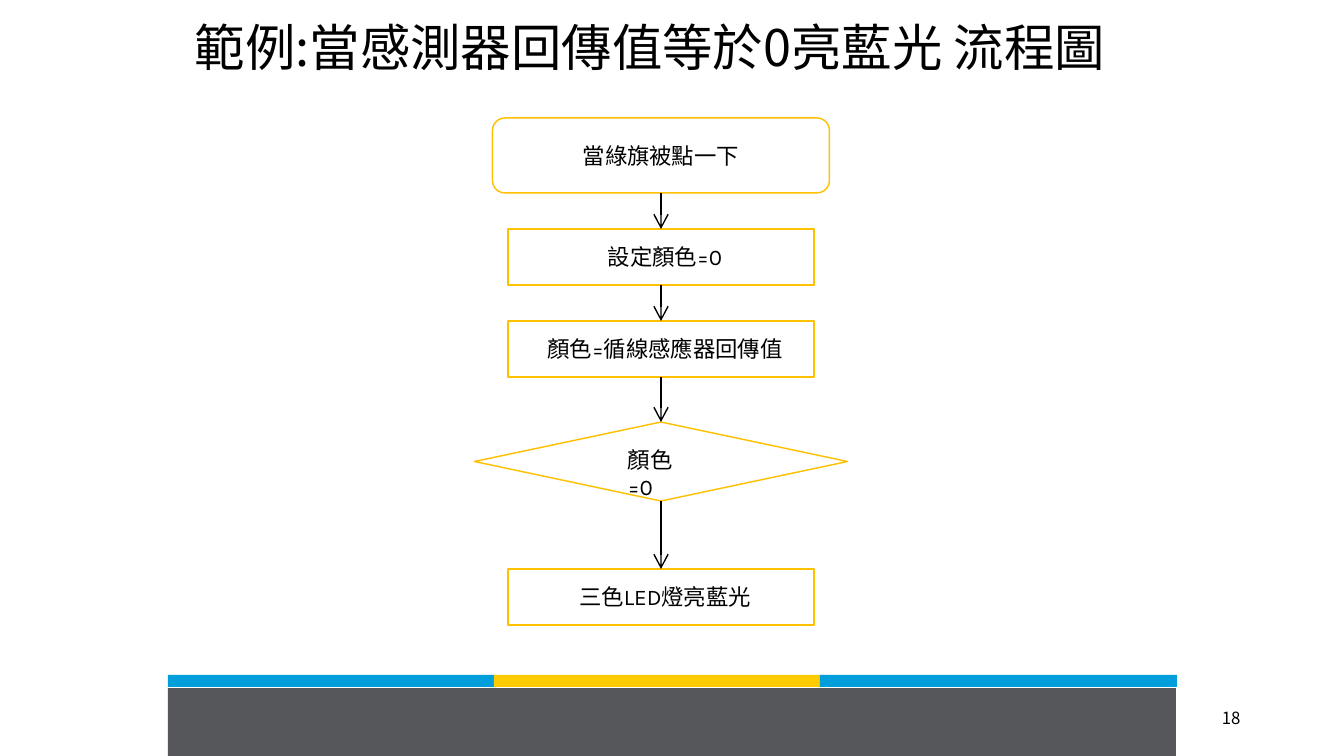
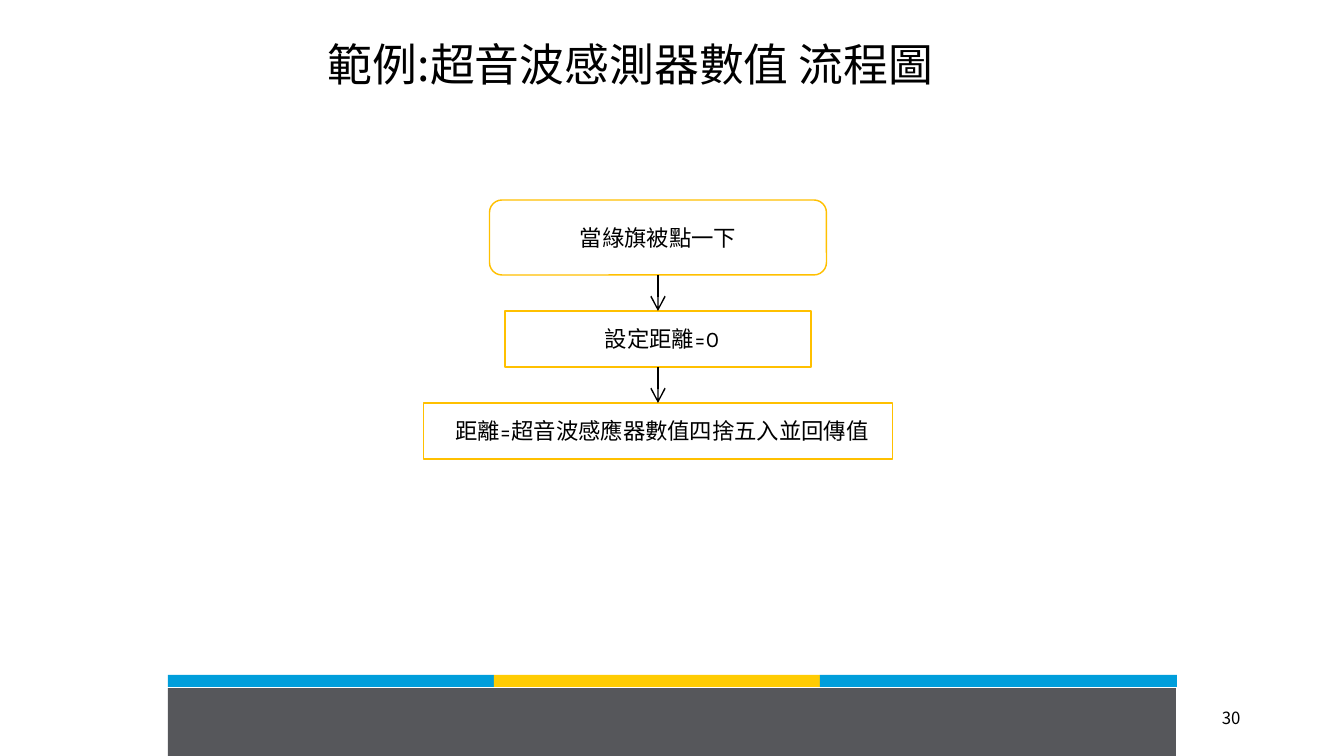
from lxml import etree
from pptx import Presentation
from pptx.dml.color import RGBColor
from pptx.enum.shapes import MSO_CONNECTOR, MSO_SHAPE
from pptx.enum.text import MSO_ANCHOR, PP_ALIGN
from pptx.oxml.ns import qn
from pptx.util import Pt

RECTANGLE = MSO_SHAPE.RECTANGLE
ROUNDED = MSO_SHAPE.ROUNDED_RECTANGLE
DIAMOND = MSO_SHAPE.DIAMOND
STRAIGHT = MSO_CONNECTOR.STRAIGHT
CENTER, LEFT = PP_ALIGN.CENTER, PP_ALIGN.LEFT
TOP, MIDDLE = MSO_ANCHOR.TOP, MSO_ANCHOR.MIDDLE
BOTTOM_SITE, TOP_SITE = 2, 0

# Shared look
EMU_PER_PX = 914400 / 100.8
SLIDE_SIZE = (1344, 756)
BLUE, YELLOW, GRAY = "009EDB", "FFCC03", "56575B"
OUTLINE, BLACK = "FFC000", "000000"
CJK_FONT, FLOW_FONT = "Noto Sans CJK JP", "Karla"
LINE_WIDTH = Pt(1.02)
BANDS = [
    (168, 675, 326, 12, BLUE),
    (494, 675, 326, 12, YELLOW),
    (820, 675, 357, 12, BLUE),
    (168, 688, 1008, 68, GRAY),
]
PAGE_NUMBER_BOX = (1222, 708, 30, 25)

# Node kinds: preset, width, height, left inset of the text
KINDS = {
    "start": (ROUNDED, 337, 75, 0),
    "step": (RECTANGLE, 306, 56, 8),
    "wide step": (RECTANGLE, 469, 56, 8),
    "decision": (DIAMOND, 373, 79, 0),
}

# Content; each node is kind, text, gap above
SLIDES = [
    {
        "title": "範例:當感測器回傳值等於0亮藍光 流程圖",
        "title_box": (195, 25, 913, 126),
        "title_size": 36,
        "number": "18",
        "center": 661,
        "top": 118,
        "nodes": [
            ("start", "當綠旗被點一下", 0),
            ("step", "設定顏色=0", 36),
            ("step", "顏色=循線感應器回傳值", 36),
            ("decision", "顏色=0", 45),
            ("step", "三色LED燈亮藍光", 68),
        ],
    },
    {
        "title": "範例:超音波感測器數值 流程圖",
        "title_box": (328, 45, 606, 112),
        "title_size": 32,
        "number": "30",
        "center": 658,
        "top": 200,
        "nodes": [
            ("start", "當綠旗被點一下", 0),
            ("step", "設定距離=0", 36),
            ("wide step", "距離=超音波感應器數值四捨五入並回傳值", 36),
        ],
    },
]


def px(value):
    return round(value * EMU_PER_PX)


def color(value):
    return RGBColor.from_string(value)


def write(shape, text, size, latin=CJK_FONT, align=LEFT, anchor=TOP,
          inset=0, spacing=None):
    frame = shape.text_frame
    frame.word_wrap = True
    frame.vertical_anchor = anchor
    frame.margin_left = px(inset)
    frame.margin_top = frame.margin_right = frame.margin_bottom = 0
    paragraph = frame.paragraphs[0]
    paragraph.text = text
    paragraph.alignment = align
    if spacing:
        paragraph.line_spacing = spacing
    font = paragraph.font
    font.name, font.size = latin, Pt(size)
    font.color.rgb = color(BLACK)
    # East Asian glyphs take their own typeface
    properties = paragraph._p.pPr.find(qn("a:defRPr"))
    east_asian = etree.Element(qn("a:ea"), typeface=CJK_FONT)
    properties.find(qn("a:latin")).addnext(east_asian)


def add_text(slide, box, text, size, **style):
    write(slide.shapes.add_textbox(*map(px, box)), text, size, **style)


def add_shape(slide, preset, box, fill=None):
    shape = slide.shapes.add_shape(preset, *map(px, box))
    shape.shadow.inherit = False
    if fill:
        shape.fill.solid()
        shape.fill.fore_color.rgb = color(fill)
        shape.line.fill.background()
    else:
        shape.fill.background()
        shape.line.color.rgb = color(OUTLINE)
        shape.line.width = LINE_WIDTH
    return shape


def add_arrow(slide, upper, lower):
    arrow = slide.shapes.add_connector(STRAIGHT, 0, 0, 0, 0)
    arrow.begin_connect(upper, BOTTOM_SITE)
    arrow.end_connect(lower, TOP_SITE)
    arrow.line.color.rgb = color(BLACK)
    arrow.line.width = LINE_WIDTH
    etree.SubElement(arrow.line._get_or_add_ln(), qn("a:tailEnd"),
                     type="arrow", w="lg", len="lg")
    etree.SubElement(arrow._element.spPr, qn("a:effectLst"))


def add_flowchart(slide, nodes, center, top):
    previous = None
    for kind, text, gap in nodes:
        preset, width, height, inset = KINDS[kind]
        top += gap
        node = add_shape(slide, preset, (center - width / 2, top, width, height))
        if kind == "decision":
            # The narrow label breaks before its value
            add_text(slide, (center - 33, top + 24, 60, 56), text, 16,
                     latin=FLOW_FONT)
        else:
            write(node, text, 16, latin=FLOW_FONT, align=CENTER,
                  anchor=MIDDLE, inset=inset)
        if previous is not None:
            add_arrow(slide, previous, node)
        previous = node
        top += height


def build_slide(presentation, content):
    slide = presentation.slides.add_slide(presentation.slide_layouts[6])
    for *box, fill in BANDS:
        add_shape(slide, RECTANGLE, box, fill)
    add_flowchart(slide, content["nodes"], content["center"], content["top"])
    add_text(slide, content["title_box"], content["title"],
             content["title_size"], spacing=0.85)
    add_text(slide, PAGE_NUMBER_BOX, content["number"], 12)


def main():
    presentation = Presentation()
    presentation.slide_width, presentation.slide_height = map(px, SLIDE_SIZE)
    for content in SLIDES:
        build_slide(presentation, content)
    presentation.save("out.pptx")


if __name__ == "__main__":
    main()
